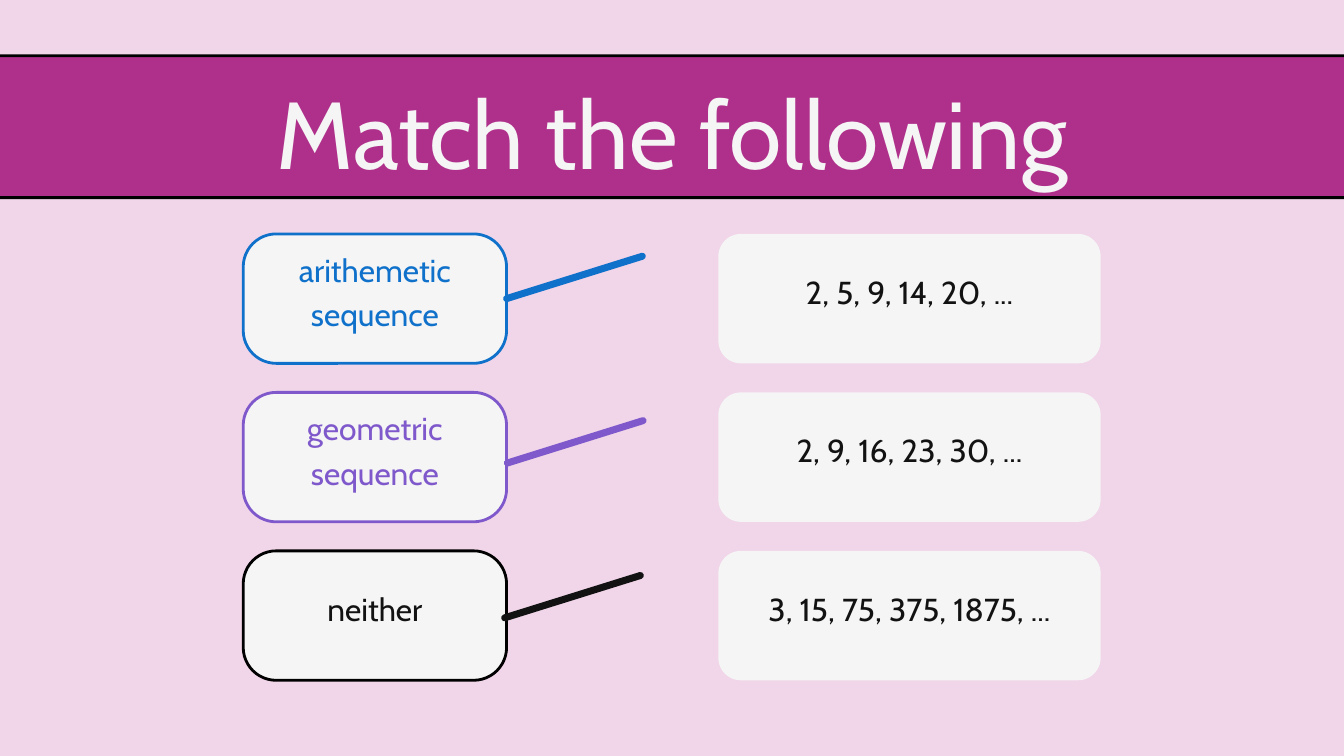
from dataclasses import dataclass

from lxml import etree
from pptx import Presentation
from pptx.dml.color import RGBColor
from pptx.enum.shapes import MSO_CONNECTOR, MSO_SHAPE
from pptx.enum.text import MSO_ANCHOR, PP_ALIGN
from pptx.oxml.ns import qn
from pptx.shapes.autoshape import Shape
from pptx.slide import Slide
from pptx.text.text import TextFrame
from pptx.util import Pt

ROUNDED = MSO_SHAPE.ROUNDED_RECTANGLE
STRAIGHT = MSO_CONNECTOR.STRAIGHT
CENTER = PP_ALIGN.CENTER
MIDDLE = MSO_ANCHOR.MIDDLE
TOP = MSO_ANCHOR.TOP
RIGHT_SIDE = 3

FONT = "Cabin"
PINK, MAGENTA, PALE = "F1D5E9", "AF308B", "F5F5F5"
BLUE, PURPLE, BLACK, INK = "1071CB", "7F59CB", "000000", "121212"

FIRST_ROW, ROW_STEP, CARD_HEIGHT = 250.6, 169.8, 138.7
TERM_LEFT, TERM_WIDTH, TERM_RADIUS = 260.6, 282.2, 35.3
ANSWER_LEFT, ANSWER_WIDTH, ANSWER_RADIUS = 769.7, 409.6, 24.1
TEXT_LIFT = 21.6
STROKE_RUN, STROKE_RISE = 145.4, 45.4


@dataclass(frozen=True)
class Match:
    """A term, the sequence beside it and the start of its stroke."""

    term: str
    answer: str
    color: str
    outline: str
    stroke_x: float
    stroke_y: float
    joined: bool = False


MATCHES = [
    Match("arithemetic sequence", "2, 5, 9, 14, 20, ...", BLUE, BLUE, 542.8, 319.95, True),
    Match("geometric sequence", "2, 9, 16, 23, 30, ...", PURPLE, PURPLE, 543.6, 496.1),
    Match("neither", "3, 15, 75, 375, 1875, ...", INK, BLACK, 540.7, 662),
]


def rgb(color: str) -> RGBColor:
    """Turn a hex string into a colour."""
    return RGBColor.from_string(color)


def write(frame: TextFrame, text: str, size: float, spacing: float, color: str) -> None:
    """Set one centred paragraph in a text frame."""
    frame.word_wrap = True
    frame.text = text
    para = frame.paragraphs[0]
    para.alignment = CENTER
    para.line_spacing = Pt(spacing)
    font = para.runs[0].font
    font.name = FONT
    font.size = Pt(size)
    font.color.rgb = rgb(color)


def add_panel(slide: Slide, left: float, top: float, width: float, height: float,
              radius: float, fill: str, outline: str | None = None) -> Shape:
    """Draw a flat rounded rectangle."""
    panel = slide.shapes.add_shape(ROUNDED, Pt(left), Pt(top), Pt(width), Pt(height))
    panel.shadow.inherit = False
    panel.adjustments[0] = radius / height
    panel.fill.solid()
    panel.fill.fore_color.rgb = rgb(fill)
    if outline:
        panel.line.color.rgb = rgb(outline)
        panel.line.width = Pt(3)
    else:
        panel.line.fill.background()
    return panel


def add_card(slide: Slide, left: float, top: float, width: float, radius: float,
             text: str, color: str, outline: str | None = None) -> Shape:
    """Draw a card with its text lifted above the middle."""
    card = add_panel(slide, left, top, width, CARD_HEIGHT, radius, PALE, outline)
    frame = card.text_frame
    frame.margin_left = frame.margin_right = Pt(4)
    frame.margin_top = 0
    frame.margin_bottom = Pt(TEXT_LIFT)
    frame.vertical_anchor = MIDDLE
    write(frame, text, 34, 47.6, color)
    return card


def add_stroke(slide: Slide, match: Match, card: Shape) -> None:
    """Draw the thick round-ended stroke that leaves a term."""
    x, y = match.stroke_x, match.stroke_y
    stroke = slide.shapes.add_connector(
        STRAIGHT, Pt(x), Pt(y), Pt(x + STROKE_RUN), Pt(y - STROKE_RISE))
    if match.joined:
        stroke.begin_connect(card, RIGHT_SIDE)
    stroke.line.color.rgb = rgb(match.color)
    stroke.line.width = Pt(7.5)
    properties = stroke._element.spPr
    properties.find(qn("a:ln")).set("cap", "rnd")
    etree.SubElement(properties, qn("a:effectLst"))


def add_title(slide: Slide, text: str) -> None:
    """Write the title over the banner."""
    box = slide.shapes.add_textbox(Pt(74.2), Pt(59), Pt(1291.6), Pt(137.5))
    frame = box.text_frame
    frame.margin_left = frame.margin_top = frame.margin_right = frame.margin_bottom = 0
    frame.vertical_anchor = TOP
    write(frame, text, 101.8, 142.5, PALE)


def main() -> None:
    """Build the matching exercise."""
    deck = Presentation()
    deck.slide_width, deck.slide_height = Pt(1440), Pt(810)
    slide = deck.slides.add_slide(deck.slide_layouts[6])
    slide.background.fill.solid()
    slide.background.fill.fore_color.rgb = rgb(PINK)

    add_panel(slide, -68.4, 59.8, 1576.8, 151.9, 5.8, MAGENTA, BLACK)
    for row, match in enumerate(MATCHES):
        top = FIRST_ROW + row * ROW_STEP
        card = add_card(slide, TERM_LEFT, top, TERM_WIDTH, TERM_RADIUS,
                        match.term, match.color, match.outline)
        add_card(slide, ANSWER_LEFT, top, ANSWER_WIDTH, ANSWER_RADIUS, match.answer, INK)
        add_stroke(slide, match, card)
    add_title(slide, "Match the following")
    deck.save("out.pptx")


if __name__ == "__main__":
    main()
